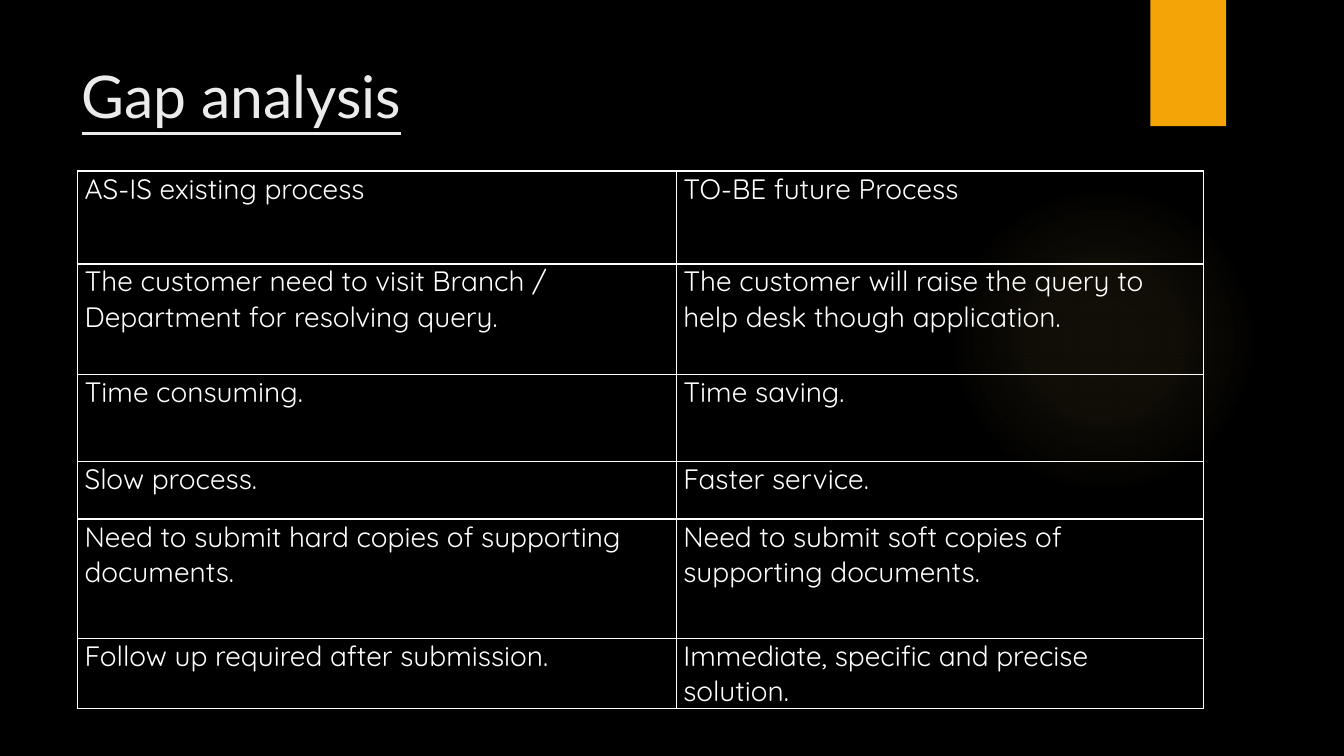
from lxml import etree
from pptx import Presentation
from pptx import util as u
from pptx.dml.color import RGBColor
from pptx.enum import shapes, text
from pptx.oxml import parse_xml
from pptx.oxml.ns import nsdecls, qn

WHITE = "FFFFFF"
COLUMN_WIDTHS = [15.09, 13.28]
ROW_HEIGHTS = [2.34, 2.78, 2.19, 1.46, 3.0, 1.78]
PROCESSES = [
    ("AS-IS existing process", "TO-BE future Process"),
    ("The customer need to visit Branch / Department for resolving query.",
     "The customer will raise the query to help desk though application."),
    ("Time consuming.", "Time saving."),
    ("Slow process.", "Faster service."),
    ("Need to submit hard copies of supporting documents.",
     "Need to submit soft copies of supporting documents."),
    ("Follow up required after submission.",
     "Immediate, specific and precise solution."),
]


def color(value):
    return RGBColor.from_string(value)


def lengths(box):
    return [u.Cm(value) for value in box]


def format_span(span, font, size, value):
    span.font.name = font
    span.font.size = u.Pt(size)
    span.font.color.rgb = color(value)


def add_plain_shape(page, kind, box):
    shape = page.shapes.add_shape(kind, *lengths(box))
    shape.shadow.inherit = False
    shape.line.fill.background()
    return shape


def add_glow(page, box):
    glow = add_plain_shape(page, shapes.MSO_SHAPE.OVAL, box)
    stops = "".join(
        f'<a:gs pos="{position * 1000}"><a:srgbClr val="FAC96A">'
        f'<a:alpha val="{alpha * 1000}"/></a:srgbClr></a:gs>'
        for position, alpha in [(0, 7), (36, 6), (69, 0), (100, 0)]
    )
    gradient = parse_xml(
        f'<a:gradFill {nsdecls("a")} rotWithShape="1"><a:gsLst>{stops}</a:gsLst>'
        '<a:path path="circle"><a:fillToRect l="50000" t="50000" r="50000" b="50000"/>'
        '</a:path></a:gradFill>'
    )
    glow._element.spPr.find(qn("a:prstGeom")).addnext(gradient)


def add_tag(page, box):
    tag = add_plain_shape(page, shapes.MSO_SHAPE.RECTANGLE, box)
    tag.fill.solid()
    tag.fill.fore_color.rgb = color("F5A408")


def fill_title(page, box):
    title = page.shapes.title
    title.left, title.top, title.width, title.height = lengths(box)
    frame = title.text_frame
    frame.text = "Gap analysis"
    frame.auto_size = text.MSO_AUTO_SIZE.NONE
    frame.vertical_anchor = text.MSO_ANCHOR.MIDDLE
    para = frame.paragraphs[0]
    para.alignment = text.PP_ALIGN.LEFT
    span = para.runs[0]
    format_span(span, "Lato", 42, "EBEBEB")
    span.font.underline = True


def add_borders(cell):
    properties = cell._tc.get_or_add_tcPr()
    for side in ("lnL", "lnR", "lnT", "lnB"):
        line = etree.SubElement(properties, qn(f"a:{side}"), w=str(u.Pt(1)))
        fill = etree.SubElement(line, qn("a:solidFill"))
        etree.SubElement(fill, qn("a:srgbClr"), val=WHITE)


def fill_cell(cell, wording):
    add_borders(cell)
    cell.fill.background()
    cell.margin_left = cell.margin_right = u.Cm(0.18)
    cell.margin_top = cell.margin_bottom = 0
    cell.vertical_anchor = text.MSO_ANCHOR.TOP
    cell.text_frame.text = wording
    para = cell.text_frame.paragraphs[0]
    para.space_after = u.Pt(10)
    format_span(para.runs[0], "Quicksand", 20, WHITE)


def add_process_table(page, box):
    table = page.shapes.add_table(
        len(PROCESSES), len(COLUMN_WIDTHS), *lengths(box)).table
    table.first_row = table.horz_banding = False
    for column, width in zip(table.columns, COLUMN_WIDTHS):
        column.width = u.Cm(width)
    for row, height, wordings in zip(table.rows, ROW_HEIGHTS, PROCESSES):
        row.height = u.Cm(height)
        for cell, wording in zip(row.cells, wordings):
            fill_cell(cell, wording)


def build_gap_analysis(deck):
    page = deck.slides.add_slide(deck.slide_layouts[5])
    page.background.fill.solid()
    page.background.fill.fore_color.rgb = color("000000")
    add_glow(page, (23.9, 4.65, 7.82, 7.82))
    add_tag(page, (28.99, 0, 1.91, 3.18))
    fill_title(page, (1.8, 1.27, 26.14, 2.26))
    add_process_table(
        page, (1.95, 4.31, sum(COLUMN_WIDTHS), sum(ROW_HEIGHTS)))


def main():
    deck = Presentation()
    deck.slide_width, deck.slide_height = u.Cm(33.87), u.Cm(19.05)
    build_gap_analysis(deck)
    deck.save("out.pptx")


if __name__ == "__main__":
    main()
